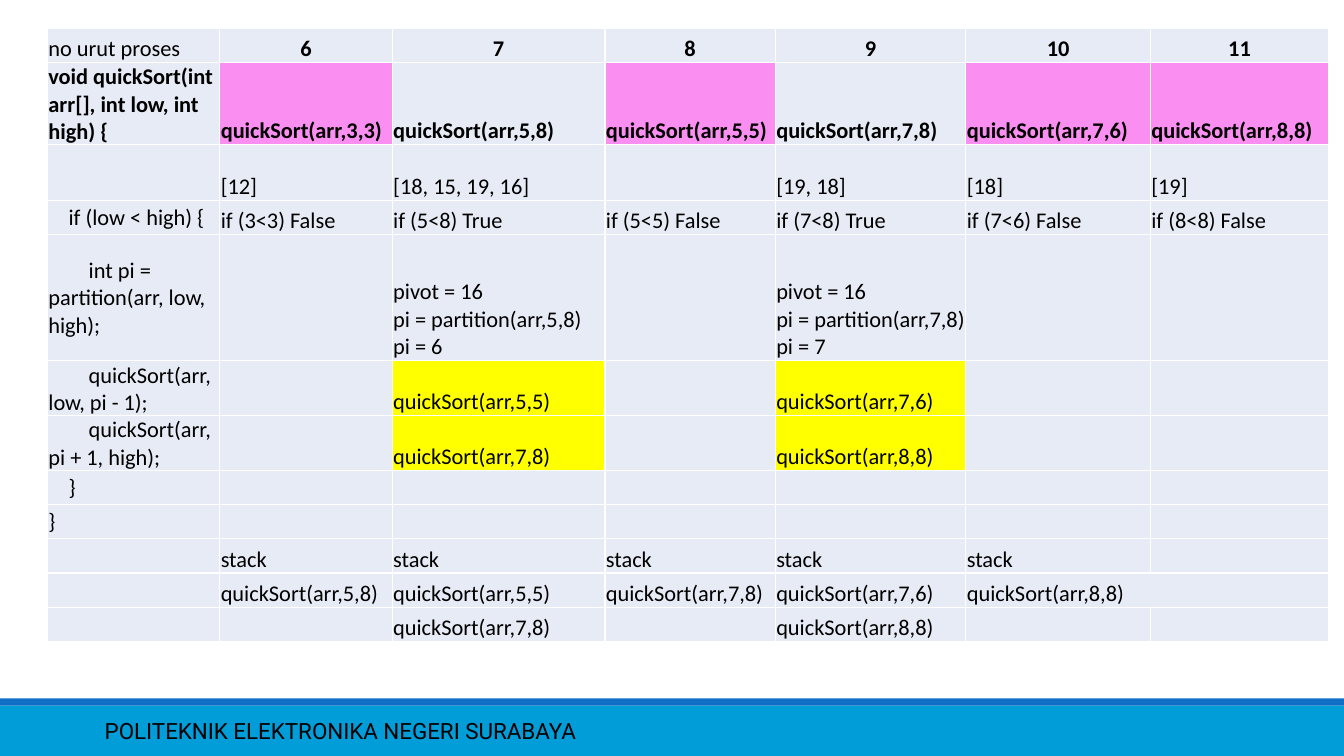
from pptx import Presentation
from pptx.dml.color import RGBColor
from pptx.enum.shapes import MSO_SHAPE
from pptx.enum.text import MSO_ANCHOR, PP_ALIGN
from pptx.util import Inches, Pt

WIDTH, HEIGHT = 13.33, 7.5
FOOTER_TOP = 7
STRIPE_HEIGHT = 0.07
CELL_FILL, STOPPED_CALL, NEXT_CALL = "E7EBF5", "FB8FF1", "FFFF00"

COLUMN_WIDTHS = [1.71, 1.71, 2.11, 1.69, 1.89, 1.83, 1.77]
ROW_HEIGHTS = [0.34, 0.78, 0.56, 0.34, 1.25, 0.52, 0.52] + [0.34] * 5
HEADER_ROW, CALL_ROW, STACK_ROW = 0, 1, 10
RECURSION_ROWS = (5, 6)

# The first column holds the code, the others one step of the process each.
TRACE = [
    ["no urut proses", "6", "7", "8", "9", "10", "11"],
    ["void quickSort(int arr[], int low, int high) {",
     "quickSort(arr,3,3)", "quickSort(arr,5,8)", "quickSort(arr,5,5)",
     "quickSort(arr,7,8)", "quickSort(arr,7,6)", "quickSort(arr,8,8)"],
    ["", "[12]", "[18, 15, 19, 16]", "", "[19, 18]", "[18]", "[19]"],
    ["    if (low < high) {", "if (3<3) False", "if (5<8) True", "if (5<5) False",
     "if (7<8) True", "if (7<6) False", "if (8<8) False"],
    ["        int pi = partition(arr, low, high);",
     "", "pivot = 16\vpi = partition(arr,5,8)\vpi = 6",
     "", "pivot = 16\vpi = partition(arr,7,8)\vpi = 7", "", ""],
    ["        quickSort(arr, low, pi - 1);",
     "", "quickSort(arr,5,5)", "", "quickSort(arr,7,6)", "", ""],
    ["        quickSort(arr, pi + 1, high);",
     "", "quickSort(arr,7,8)", "", "quickSort(arr,8,8)", "", ""],
    ["    }", "", "", "", "", "", ""],
    ["}", "", "", "", "", "", ""],
    ["", "stack", "stack", "stack", "stack", "stack", ""],
    ["", "quickSort(arr,5,8)", "quickSort(arr,5,5)", "quickSort(arr,7,8)",
     "quickSort(arr,7,6)", "quickSort(arr,8,8)", ""],
    ["", "", "quickSort(arr,7,8)", "", "quickSort(arr,8,8)", "", ""],
]


def paint(fill, color):
    fill.solid()
    fill.fore_color.rgb = RGBColor.from_string(color)


def set_font(font, name, bold=False):
    font.name, font.size, font.bold = name, Pt(16), bold
    font.color.rgb = RGBColor.from_string("000000")


presentation = Presentation()
presentation.slide_width = Inches(WIDTH)
presentation.slide_height = Inches(HEIGHT)
slide = presentation.slides.add_slide(presentation.slide_layouts[6])

# Footer
for top, height, color in [
    (FOOTER_TOP, HEIGHT - FOOTER_TOP, "009DD9"),
    (FOOTER_TOP - STRIPE_HEIGHT, STRIPE_HEIGHT, "0F6FC6"),
]:
    band = slide.shapes.add_shape(
        MSO_SHAPE.RECTANGLE, 0, Inches(top), Inches(WIDTH), Inches(height))
    band.shadow.inherit = False
    band.line.fill.background()
    paint(band.fill, color)

footer = slide.shapes.add_textbox(Inches(0.94), Inches(7.05), Inches(8.41), Inches(0.4))
footer.text_frame.word_wrap = True
footer.text_frame.vertical_anchor = MSO_ANCHOR.MIDDLE
paragraph = footer.text_frame.paragraphs[0]
paragraph.text = "POLITEKNIK ELEKTRONIKA NEGERI SURABAYA"
set_font(paragraph.font, "Roboto")

# Trace table
table = slide.shapes.add_table(
    len(ROW_HEIGHTS), len(COLUMN_WIDTHS), Inches(0.47), Inches(0.28),
    Inches(sum(COLUMN_WIDTHS)), Inches(sum(ROW_HEIGHTS))).table
table.first_row = table.horz_banding = False
for column, width in zip(table.columns, COLUMN_WIDTHS):
    column.width = Inches(width)
for row, height in zip(table.rows, ROW_HEIGHTS):
    row.height = Inches(height)

for row_index, texts in enumerate(TRACE):
    for column_index, text in enumerate(texts):
        cell = table.cell(row_index, column_index)
        is_code = column_index == 0 and row_index != HEADER_ROW
        is_step_number = row_index == HEADER_ROW and column_index > 0

        cell.margin_left = cell.margin_right = cell.margin_top = Inches(0.01)
        cell.margin_bottom = 0
        cell.vertical_anchor = MSO_ANCHOR.MIDDLE if is_code else MSO_ANCHOR.BOTTOM

        color = CELL_FILL
        if row_index == CALL_ROW and TRACE[3][column_index].endswith("False"):
            color = STOPPED_CALL
        elif row_index in RECURSION_ROWS and column_index > 0 and text:
            color = NEXT_CALL
        paint(cell.fill, color)

        paragraph = cell.text_frame.paragraphs[0]
        if text:
            paragraph.text = text
        if is_step_number:
            paragraph.alignment = PP_ALIGN.CENTER
        set_font(paragraph.font, "Calibri", bold=is_step_number or row_index == CALL_ROW)

table.cell(STACK_ROW, 5).merge(table.cell(STACK_ROW, 6))

presentation.save("out.pptx")
